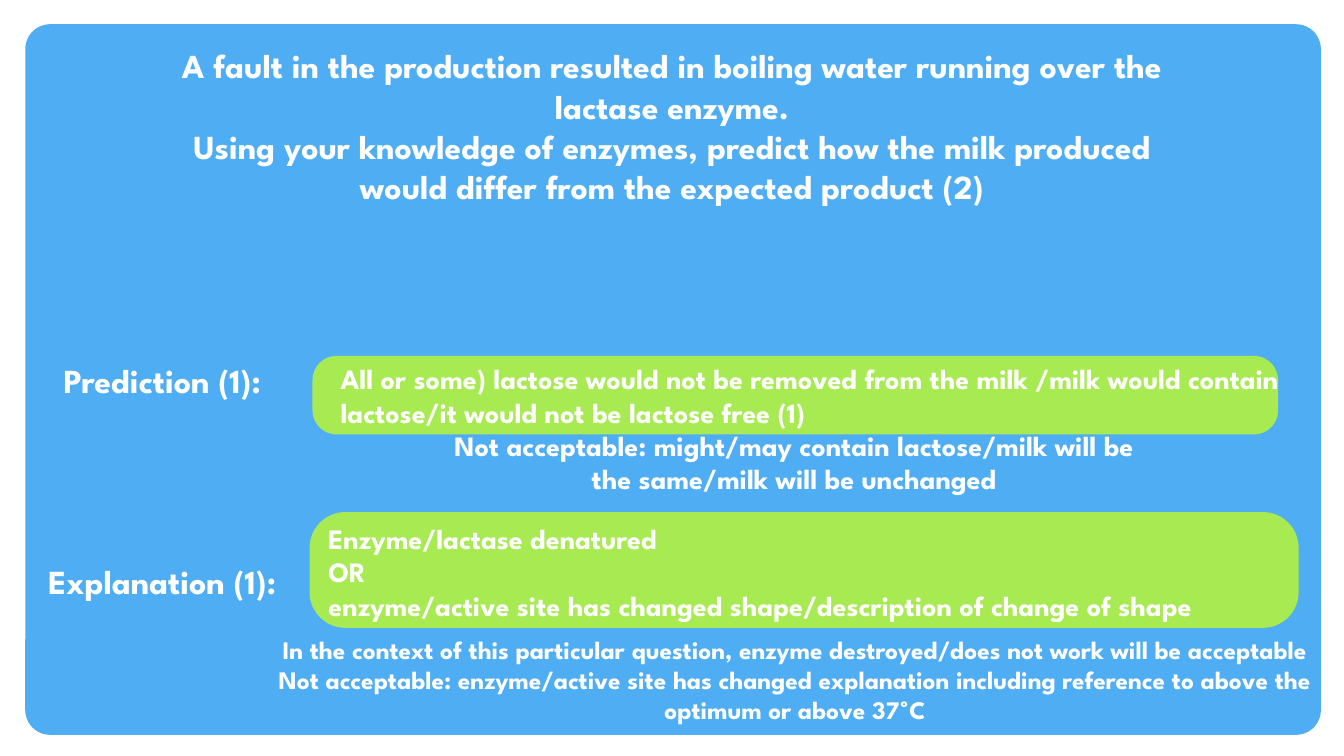
from pptx import Presentation
from pptx.dml.color import RGBColor
from pptx.enum.shapes import MSO_SHAPE
from pptx.enum.text import MSO_ANCHOR, MSO_AUTO_SIZE, PP_ALIGN
from pptx.util import Inches, Pt

WIDTH, HEIGHT = Inches(13.33), Inches(7.5)
BLUE = RGBColor(0x4F, 0xAD, 0xF3)
GREEN = RGBColor(0xA7, 0xEA, 0x52)
WHITE = RGBColor(0xFF, 0xFF, 0xFF)
FONT = "League Spartan"

QUESTION = [
    "A fault in the production resulted in boiling water running over the",
    "lactase enzyme.",
    "Using your knowledge of enzymes, predict how the milk produced",
    "would differ from the expected product (2)",
]
PREDICTION = [
    "All or some) lactose would not be removed from the milk /milk would "
    "contain lactose/it would not be lactose free (1)",
]
PREDICTION_NOTE = [
    "Not acceptable: might/may contain lactose/milk will be the same/milk "
    "will be unchanged",
]
EXPLANATION = [
    "Enzyme/lactase denatured",
    "OR",
    "enzyme/active site has changed shape/description of change of shape",
]
EXPLANATION_NOTE = [
    "In the context of this particular question, enzyme destroyed/does not "
    "work will be acceptable Not acceptable: enzyme/active site has changed "
    "explanation including reference to above the optimum or above 37˚C",
]


def area(left, top, width, height):
    """Turn percentages of the slide into lengths."""
    return (int(WIDTH * left / 100), int(HEIGHT * top / 100),
            int(WIDTH * width / 100), int(HEIGHT * height / 100))


def write_text(shape, lines, size=20, align=PP_ALIGN.CENTER):
    frame = shape.text_frame
    frame.word_wrap = True
    frame.auto_size = MSO_AUTO_SIZE.NONE
    frame.vertical_anchor = MSO_ANCHOR.TOP
    for index, line in enumerate(lines):
        paragraph = frame.add_paragraph() if index else frame.paragraphs[0]
        paragraph.alignment = align
        run = paragraph.add_run()
        run.text = line
        run.font.name = FONT
        run.font.size = Pt(size)
        run.font.bold = True
        run.font.color.rgb = WHITE


def add_text(slide, place, lines, **text_format):
    write_text(slide.shapes.add_textbox(*area(*place)), lines, **text_format)


def add_panel(slide, place, color, rounding):
    panel = slide.shapes.add_shape(MSO_SHAPE.ROUNDED_RECTANGLE, *area(*place))
    panel.adjustments[0] = rounding
    panel.fill.solid()
    panel.fill.fore_color.rgb = color
    panel.line.fill.background()
    panel.shadow.inherit = False
    return panel


def add_title(slide, place, lines):
    title = slide.shapes.title
    title.left, title.top, title.width, title.height = area(*place)
    write_text(title, lines, size=24)
    return title


def main():
    presentation = Presentation()
    presentation.slide_width, presentation.slide_height = WIDTH, HEIGHT
    slide = presentation.slides.add_slide(presentation.slide_layouts[5])

    # Background panel, placed behind the question
    panel = add_panel(slide, (1.88, 3.2, 96.4, 94), BLUE, 0.035)
    title = add_title(slide, (3.45, 5.33, 93.1, 22.9), QUESTION)
    title._element.addprevious(panel._element)

    # Row labels
    for label, top in (("Prediction (1):", 46.93), ("Explanation (1):", 73.6)):
        add_text(slide, (1.5, top, 21.15, 6.7), [label], size=24)

    # Prediction answer
    add_panel(slide, (23.25, 47.07, 71.85, 10.4), GREEN, 0.309)
    add_text(slide, (24.6, 47.2, 75.4, 10.27), PREDICTION, align=PP_ALIGN.LEFT)
    add_text(slide, (32.2, 56, 53.8, 10.27), PREDICTION_NOTE)

    # Explanation answer
    add_panel(slide, (23.03, 67.73, 73.6, 15.33), GREEN, 0.309)
    add_text(slide, (23.7, 68.27, 75.4, 14.8), EXPLANATION, align=PP_ALIGN.LEFT)
    add_text(slide, (19.2, 83.2, 79.9, 16.5), EXPLANATION_NOTE, size=18)

    presentation.save("out.pptx")


if __name__ == "__main__":
    main()
